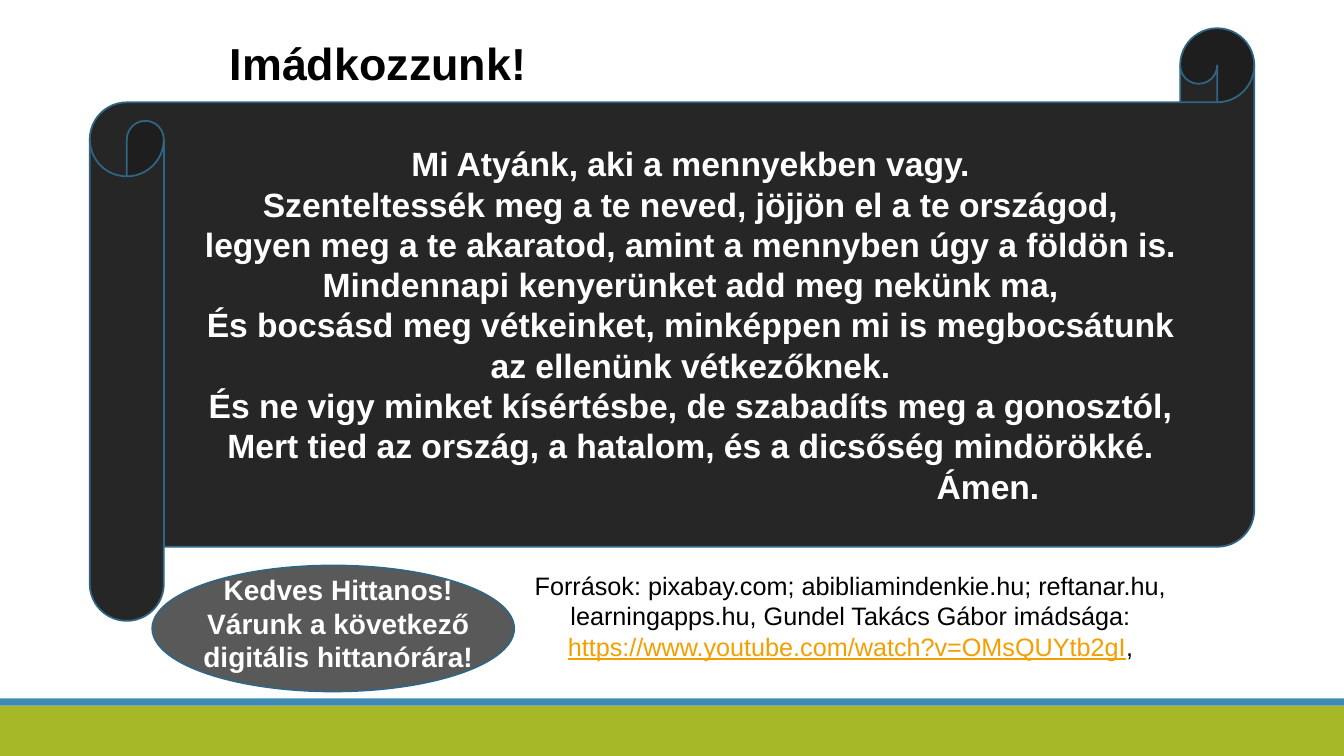
from dataclasses import dataclass

from pptx import Presentation
from pptx.dml.color import RGBColor
from pptx.enum.shapes import MSO_SHAPE
from pptx.enum.text import MSO_ANCHOR, PP_ALIGN
from pptx.shapes.autoshape import Shape
from pptx.slide import Slide
from pptx.text.text import TextFrame
from pptx.util import Inches, Pt

RECTANGLE = MSO_SHAPE.RECTANGLE
SCROLL = MSO_SHAPE.HORIZONTAL_SCROLL
ELLIPSE = MSO_SHAPE.OVAL
CENTER = PP_ALIGN.CENTER
MIDDLE = MSO_ANCHOR.MIDDLE
TOP = MSO_ANCHOR.TOP

FONT = "Arial"
BLACK, WHITE = "000000", "FFFFFF"
OUTLINE, LINK = "306684", "F59E00"


@dataclass(frozen=True)
class Box:
    left: float
    top: float
    width: float
    height: float


@dataclass(frozen=True)
class Panel:
    kind: MSO_SHAPE
    box: Box
    fill: str
    outline: str | None = None


@dataclass(frozen=True)
class Words:
    text: str
    size: int
    color: str
    bold: bool = False
    underline: bool = False


Lines = list[list[Words]]

GREEN_BAND = Panel(RECTANGLE, Box(0, 7, 13.33, 0.5), "A6B727")
BLUE_STRIPE = Panel(RECTANGLE, Box(0, 6.93, 13.33, 0.07), "418AB3")
PRAYER_SCROLL = Panel(SCROLL, Box(0.89, 0.28, 11.55, 5.88), "262626", OUTLINE)
INVITATION_OVAL = Panel(ELLIPSE, Box(1.51, 5.61, 3.59, 1.25), "595959", OUTLINE)

PRAYER = [
    "Mi Atyánk, aki a mennyekben vagy.",
    "Szenteltessék meg a te neved, jöjjön el a te országod,",
    "legyen meg a te akaratod, amint a mennyben úgy a földön is.",
    "Mindennapi kenyerünket add meg nekünk ma,",
    "És bocsásd meg vétkeinket, minképpen mi is megbocsátunk",
    "az ellenünk vétkezőknek.",
    "És ne vigy minket kísértésbe, de szabadíts meg a gonosztól,",
    "Mert tied az ország, a hatalom, és a dicsőség mindörökké.",
    "Ámen.",
]
AMEN_INDENT = 5.9
INVITATION = ["Kedves Hittanos!", "Várunk a következő digitális hittanórára!"]
SOURCES = [
    Words("Források: pixabay.com; abibliamindenkie.hu; reftanar.hu, "
          "learningapps.hu, Gundel Takács Gábor imádsága: ", 18, BLACK),
    Words("https://www.youtube.com/watch?v=OMsQUYtb2gI", 18, LINK, underline=True),
    Words(",", 18, BLACK),
]


def rgb(color: str) -> RGBColor:
    return RGBColor.from_string(color)


def inches(box: Box) -> tuple[Inches, Inches, Inches, Inches]:
    return Inches(box.left), Inches(box.top), Inches(box.width), Inches(box.height)


def bold_lines(texts: list[str], size: int, color: str) -> Lines:
    return [[Words(text, size, color, bold=True)] for text in texts]


def add_panel(slide: Slide, panel: Panel) -> Shape:
    shape = slide.shapes.add_shape(panel.kind, *inches(panel.box))
    shape.shadow.inherit = False
    shape.fill.solid()
    shape.fill.fore_color.rgb = rgb(panel.fill)
    if panel.outline:
        shape.line.color.rgb = rgb(panel.outline)
        shape.line.width = Pt(1.25)
    else:
        shape.line.fill.background()
    return shape


def write(frame: TextFrame, lines: Lines, anchor: MSO_ANCHOR) -> None:
    frame.word_wrap = True
    frame.vertical_anchor = anchor
    for index, line in enumerate(lines):
        paragraph = frame.add_paragraph() if index else frame.paragraphs[0]
        paragraph.alignment = CENTER
        for words in line:
            run = paragraph.add_run()
            run.text = words.text
            run.font.name = FONT
            run.font.size = Pt(words.size)
            run.font.bold = words.bold
            run.font.underline = words.underline
            run.font.color.rgb = rgb(words.color)


def add_text(slide: Slide, box: Box, lines: Lines) -> None:
    write(slide.shapes.add_textbox(*inches(box)).text_frame, lines, TOP)


def main() -> None:
    presentation = Presentation()
    presentation.slide_width = Inches(13.33)
    presentation.slide_height = Inches(7.5)
    slide = presentation.slides.add_slide(presentation.slide_layouts[6])

    add_panel(slide, GREEN_BAND)
    add_panel(slide, BLUE_STRIPE)
    add_text(slide, Box(1.78, 0.3, 3.94, 0.61), bold_lines(["Imádkozzunk!"], 32, BLACK))

    prayer = add_panel(slide, PRAYER_SCROLL).text_frame
    write(prayer, bold_lines(PRAYER, 24, WHITE), MIDDLE)
    amen = prayer.paragraphs[-1]
    amen._p.get_or_add_pPr().set("marL", str(Inches(AMEN_INDENT)))

    add_panel(slide, INVITATION_OVAL)
    add_text(slide, Box(1.56, 5.63, 3.59, 1.11), bold_lines(INVITATION, 20, WHITE))
    add_text(slide, Box(5.1, 5.61, 6.67, 1.01), [SOURCES])

    presentation.save("out.pptx")


if __name__ == "__main__":
    main()
